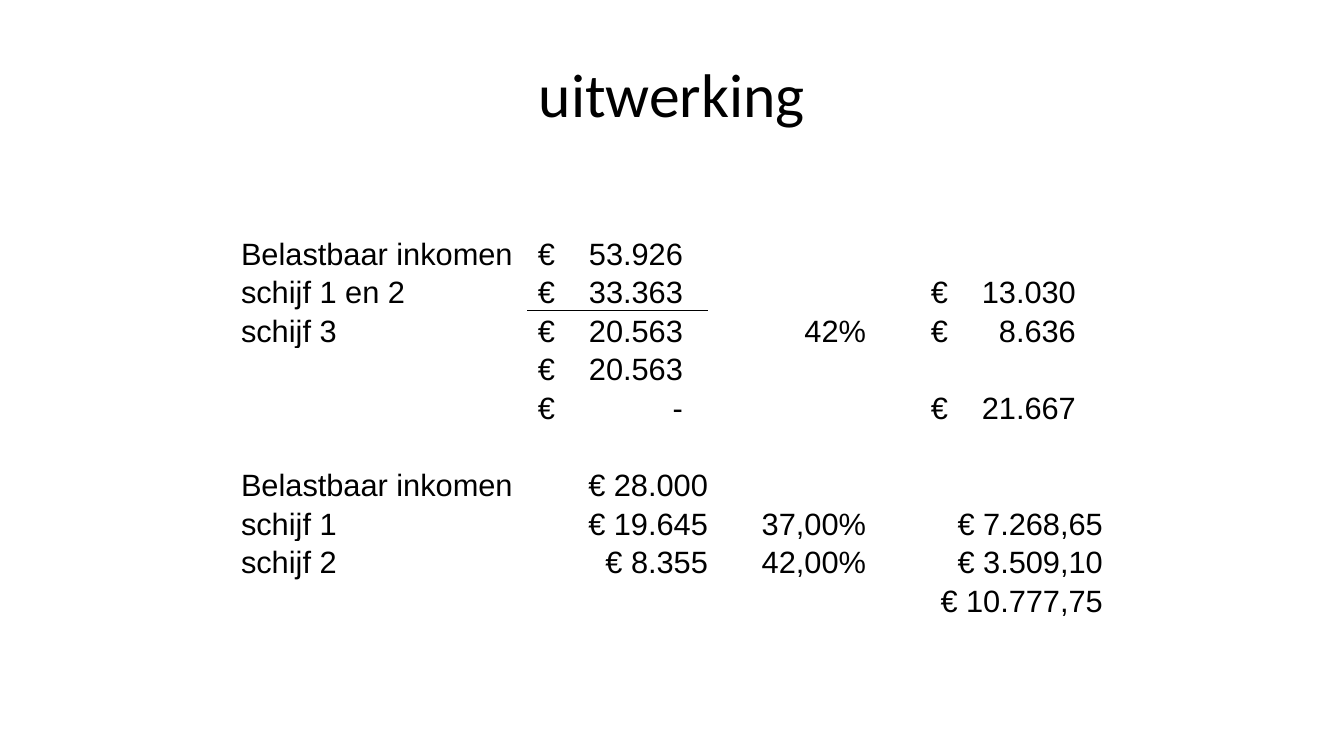
from dataclasses import dataclass

from lxml import etree
from pptx import Presentation
from pptx import util as u
from pptx.dml.color import RGBColor
from pptx.enum import text
from pptx.oxml.ns import qn

LEFT, CENTER, RIGHT = text.PP_ALIGN.LEFT, text.PP_ALIGN.CENTER, text.PP_ALIGN.RIGHT


@dataclass(frozen=True)
class Theme:
    ink: str = "000000"
    title_font: str = "Calibri"
    body_font: str = "Arial"
    title_size: int = 44
    body_size: int = 22
    rule_width: float = 0.5


def px(n):
    return u.Emu(round(n * 914400 / 100.8))


def write(tf, content, *, font, size, color, align=LEFT, tab=None):
    """Put one formatted paragraph in a text frame; tab is a right tab stop in px."""
    p = tf.paragraphs[0]
    p.alignment = align
    if tab:
        tabs = etree.SubElement(p._p.get_or_add_pPr(), qn("a:tabLst"))
        etree.SubElement(tabs, qn("a:tab"), pos=str(px(tab)), algn="r")
    r = p.add_run()
    r.text = content
    r.font.name, r.font.size = font, u.Pt(size)
    r.font.color.rgb = RGBColor.from_string(color)


class SlideBuilder:
    def __init__(self, prs, theme):
        self.theme = theme
        self.slide = prs.slides.add_slide(prs.slide_layouts[5])

    def title(self, content, x, y, w, h):
        sp = self.slide.shapes.title
        sp.left, sp.top, sp.width, sp.height = map(px, (x, y, w, h))
        sp.text_frame.vertical_anchor = text.MSO_ANCHOR.MIDDLE
        write(sp.text_frame, content, font=self.theme.title_font,
              size=self.theme.title_size, color=self.theme.ink, align=CENTER)

    def table(self, rows, x, y, widths, h):
        frame = self.slide.shapes.add_table(
            len(rows), len(widths), px(x), px(y), px(sum(widths)), px(h))
        table = frame.table
        table.first_row = table.horz_banding = False
        for column, w in zip(table.columns, widths):
            column.width = px(w)
        for i, values in enumerate(rows):
            table.rows[i].height = px(h) // len(rows)
            for j, value in enumerate(values):
                self.cell(table.cell(i, j), value, j)
        return table

    def cell(self, cell, value, column):
        """Labels go left, amounts right; a tab sets the euro sign apart from its number."""
        accounting = "\t" in value
        cell.fill.background()
        cell.vertical_anchor = text.MSO_ANCHOR.BOTTOM
        cell.margin_left = px(10 if accounting else 1)
        cell.margin_right = cell.margin_top = px(1)
        cell.margin_bottom = 0
        if value:
            write(cell.text_frame, value, font=self.theme.body_font,
                  size=self.theme.body_size, color=self.theme.ink,
                  align=LEFT if accounting or column == 0 else RIGHT,
                  tab=145 if accounting else None)

    def rule_below(self, table, row, column):
        for i, side in ((row, "a:lnB"), (row + 1, "a:lnT")):
            tc_pr = table.cell(i, column)._tc.get_or_add_tcPr()
            ln = etree.Element(qn(side), w=str(u.Pt(self.theme.rule_width)))
            fill = etree.SubElement(ln, qn("a:solidFill"))
            etree.SubElement(fill, qn("a:srgbClr"), val=self.theme.ink)
            tc_pr.insert(0, ln)


ROWS = [
    ("Belastbaar inkomen", "€\t53.926", "", "", ""),
    ("schijf 1 en 2", "€\t33.363", "", "", "€\t13.030"),
    ("schijf 3", "€\t20.563", "42%", "", "€\t8.636"),
    ("", "€\t20.563", "", "", ""),
    ("", "€\t-", "", "", "€\t21.667"),
    ("", "", "", "", ""),
    ("Belastbaar inkomen", "€ 28.000", "", "", ""),
    ("schijf 1", "€ 19.645", "37,00%", "", "€ 7.268,65"),
    ("schijf 2", "€ 8.355", "42,00%", "", "€ 3.509,10"),
    ("", "", "", "", "€ 10.777,75"),
]


def main():
    prs = Presentation()
    prs.slide_width, prs.slide_height = px(1344), px(756)
    s = SlideBuilder(prs, Theme())
    s.title("uitwerking", 67, 30, 1210, 126)
    table = s.table(ROWS, 240, 233, (288, 181, 158, 54, 183), 386)
    s.rule_below(table, 1, 1)
    prs.save("out.pptx")


if __name__ == "__main__":
    main()
